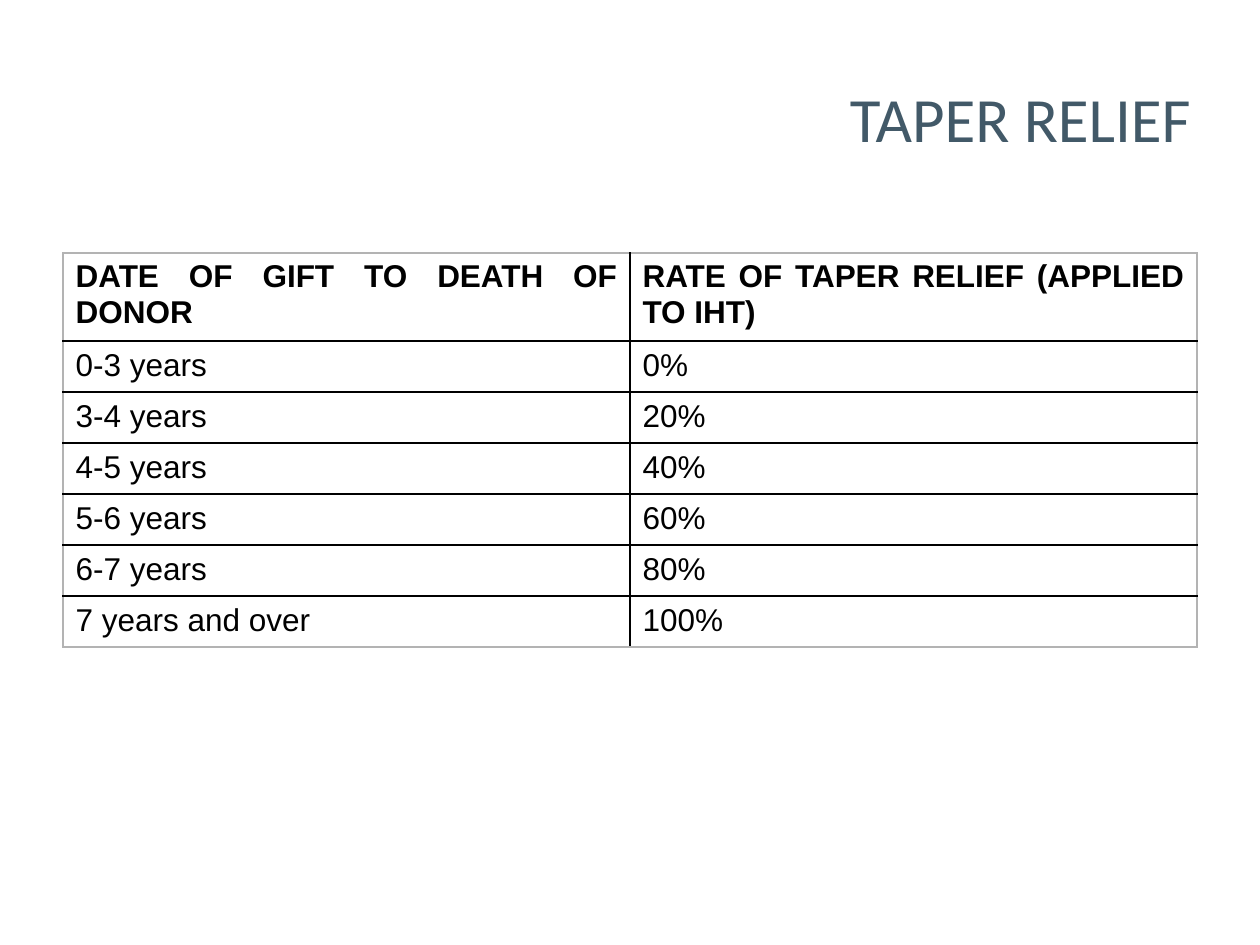
from lxml.etree import SubElement
from pptx import Presentation
from pptx.dml.color import RGBColor
from pptx.enum.text import MSO_ANCHOR, PP_ALIGN
from pptx.oxml.ns import qn
from pptx.util import Pt

PX = 914400 // 126
COLORS = {"title": "425968", "text": "000000", "inner": "000000", "outer": "B3B3B3"}
TITLE_FONT = {"name": "Calibri", "size": Pt(36), "bold": False}
HEADER_FONT = {"name": "Arial", "size": Pt(18), "bold": True}
BODY_FONT = {**HEADER_FONT, "bold": False}

RELIEF_RATES = [
    ("DATE OF GIFT TO DEATH OF DONOR", "RATE OF TAPER RELIEF (APPLIED TO IHT)"),
    ("0-3 years", "0%"),
    ("3-4 years", "20%"),
    ("4-5 years", "40%"),
    ("5-6 years", "60%"),
    ("6-7 years", "80%"),
    ("7 years and over", "100%"),
]
HEADER_HEIGHT, ROW_HEIGHT, COLUMN_WIDTH = 84, 51, 567


def write(frame, text, alignment, font, color):
    paragraph = frame.paragraphs[0]
    paragraph.alignment = alignment
    run = paragraph.add_run()
    run.text = text
    for key, value in font.items():
        setattr(run.font, key, value)
    run.font.color.rgb = RGBColor.from_string(COLORS[color])


def add_border(cell, side, color):
    line = SubElement(cell._tc.get_or_add_tcPr(), qn(f"a:ln{side}"), w=str(Pt(1)))
    fill = SubElement(line, qn("a:solidFill"))
    SubElement(fill, qn("a:srgbClr"), val=COLORS[color])


prs = Presentation()
prs.slide_width, prs.slide_height = 1260 * PX, 945 * PX
slide = prs.slides.add_slide(prs.slide_layouts[6])

title = slide.shapes.add_textbox(63 * PX, 13 * PX, 1134 * PX, 208 * PX).text_frame
title_format = {"word_wrap": True, "vertical_anchor": MSO_ANCHOR.MIDDLE}
title_format.update({f"margin_{side}": 6 * PX for side in ("left", "right", "top", "bottom")})
for key, value in title_format.items():
    setattr(title, key, value)
write(title, "TAPER RELIEF", PP_ALIGN.RIGHT, TITLE_FONT, "title")

row_count, column_count = len(RELIEF_RATES), len(RELIEF_RATES[0])
table_height = HEADER_HEIGHT + ROW_HEIGHT * (row_count - 1)
rates = slide.shapes.add_table(
    row_count, column_count, 63 * PX, 253 * PX,
    COLUMN_WIDTH * column_count * PX, table_height * PX,
).table
rates.first_row = rates.horz_banding = False
for column in rates.columns:
    column.width = COLUMN_WIDTH * PX

for r, entries in enumerate(RELIEF_RATES):
    rates.rows[r].height = (ROW_HEIGHT if r else HEADER_HEIGHT) * PX
    for c, entry in enumerate(entries):
        cell = rates.cell(r, c)
        on_edge = {"L": c == 0, "R": c == column_count - 1,
                   "T": r == 0, "B": r == row_count - 1}
        for side, outer in on_edge.items():
            add_border(cell, side, "outer" if outer else "inner")
        cell.fill.background()
        write(cell.text_frame, entry, PP_ALIGN.JUSTIFY, BODY_FONT if r else HEADER_FONT, "text")

prs.save("out.pptx")
